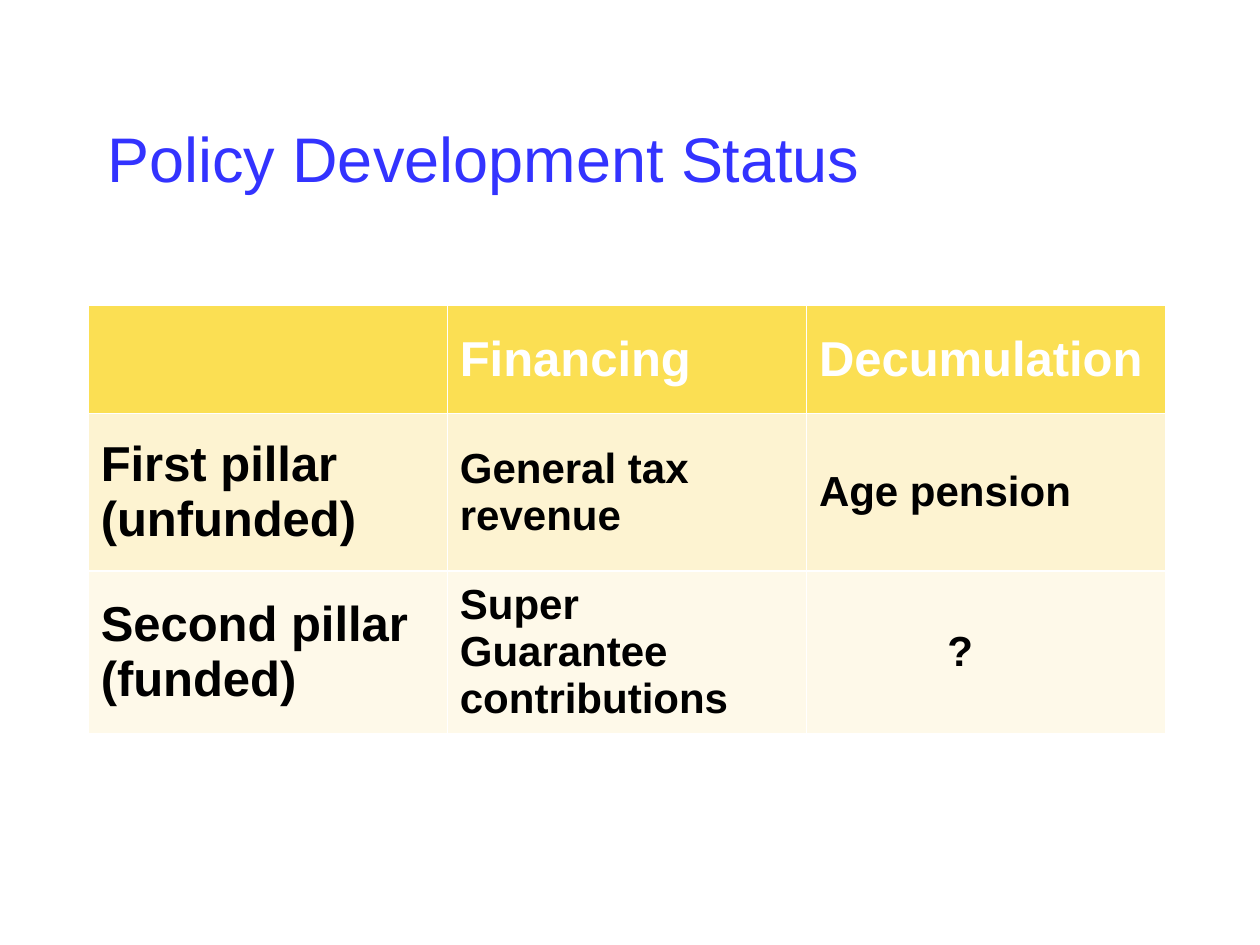
import dataclasses

import pptx
import pptx.dml.color
import pptx.enum.text
import pptx.util
from pptx.dml.color import RGBColor
from pptx.util import Inches

BLUE = RGBColor(0x33, 0x33, 0xFF)
WHITE = RGBColor(0xFF, 0xFF, 0xFF)
BLACK = RGBColor(0x00, 0x00, 0x00)
GOLD = RGBColor(0xFB, 0xDF, 0x53)
CREAM = RGBColor(0xFD, 0xF3, 0xD1)
IVORY = RGBColor(0xFE, 0xF9, 0xE9)

COL_WIDTH = 2.85
MIDDLE = pptx.enum.text.MSO_ANCHOR.MIDDLE


@dataclasses.dataclass
class Row:
    texts: tuple[str, str, str]
    height: float
    fill: RGBColor
    color: RGBColor
    body_size: int


ROWS = [
    Row(("", "Financing", "Decumulation"), 0.86, GOLD, WHITE, 28),
    Row(("First pillar (unfunded)", "General tax revenue", "Age pension"),
        1.25, CREAM, BLACK, 24),
    Row(("Second pillar (funded)", "Super Guarantee contributions", "?"),
        1.29, IVORY, BLACK, 24),
]


def write(tf: pptx.text.text.TextFrame, text: str, size: int,
          color: RGBColor, bold: bool) -> None:
    p = tf.paragraphs[0]
    p.alignment = pptx.enum.text.PP_ALIGN.LEFT
    if not text:
        p.font.size = pptx.util.Pt(size)
        return
    r = p.add_run()
    r.text = text
    fmt = {"name": "Arial", "size": pptx.util.Pt(size), "bold": bold}
    for name, value in fmt.items():
        setattr(r.font, name, value)
    r.font.color.rgb = color


def add_title(s: pptx.slide.Slide, text: str) -> None:
    sp = s.shapes.title
    box = {"left": 0.75, "top": 0.83, "width": 8.5, "height": 0.83}
    for name, value in box.items():
        setattr(sp, name, Inches(value))
    sp.text_frame.vertical_anchor = MIDDLE
    write(sp.text_frame, text, 36, BLUE, False)


def add_pillar_table(s: pptx.slide.Slide, rows: list[Row]) -> None:
    cols = len(rows[0].texts)
    height = sum(row.height for row in rows)
    table = s.shapes.add_table(
        len(rows), cols, Inches(0.7), Inches(2.42),
        Inches(COL_WIDTH * cols), Inches(height)).table
    for column in table.columns:
        column.width = Inches(COL_WIDTH)
    for i, row in enumerate(rows):
        table.rows[i].height = Inches(row.height)
        for j, text in enumerate(row.texts):
            cell = table.cell(i, j)
            cell.vertical_anchor = MIDDLE
            cell.fill.solid()
            cell.fill.fore_color.rgb = row.fill
            size = 28 if j == 0 else row.body_size
            write(cell.text_frame, text, size, row.color, True)
    table.cell(len(rows) - 1, cols - 1).margin_left = Inches(1.12)


def main() -> None:
    prs = pptx.Presentation()
    prs.slide_width, prs.slide_height = Inches(10), Inches(7.5)
    s = prs.slides.add_slide(prs.slide_layouts[5])
    add_title(s, "Policy Development Status")
    add_pillar_table(s, ROWS)
    prs.save("out.pptx")


if __name__ == "__main__":
    main()
